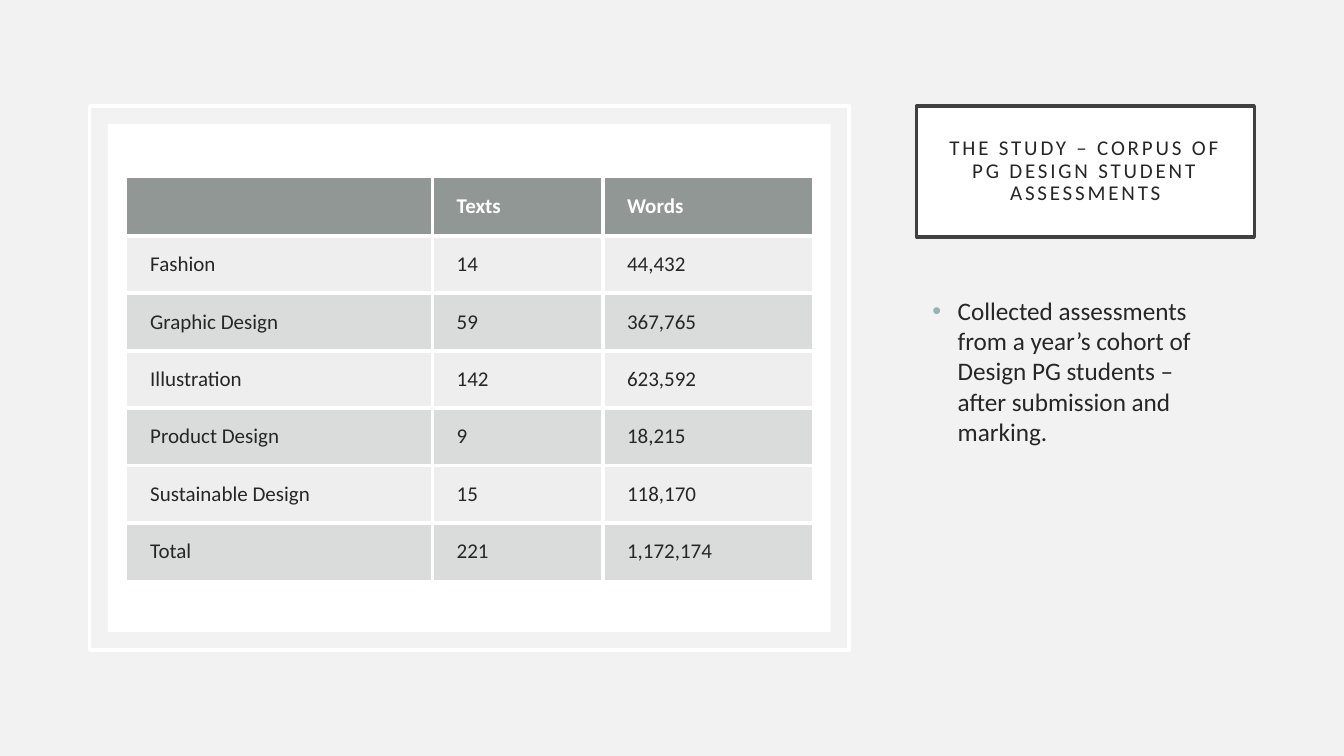
import pptx
import pptx.dml.color
import pptx.enum.shapes
import pptx.enum.text
import pptx.oxml
import pptx.oxml.ns
import pptx.util
import lxml.etree

Inches = pptx.util.Inches
Pt = pptx.util.Pt
RGBColor = pptx.dml.color.RGBColor
qn = pptx.oxml.ns.qn

BACKGROUND = RGBColor(0xF2, 0xF2, 0xF2)
WHITE = RGBColor(0xFF, 0xFF, 0xFF)
INK = RGBColor(0x26, 0x26, 0x26)
TITLE_BORDER = RGBColor(0x40, 0x40, 0x40)
BULLET = RGBColor(0x9B, 0xAF, 0xB5)
HEADER_FILL = RGBColor(0x63, 0x6B, 0x68)
BODY_FILL = RGBColor(0x87, 0x8E, 0x8B)

CORPUS = [
    ("", "Texts", "Words"),
    ("Fashion", "14", "44,432"),
    ("Graphic Design", "59", "367,765"),
    ("Illustration", "142", "623,592"),
    ("Product Design", "9", "18,215"),
    ("Sustainable Design", "15", "118,170"),
    ("Total", "221", "1,172,174"),
]
COLUMN_WIDTHS = (3.04, 1.69, 2.08)


def write(frame, text, size=15, color=INK, bold=False, align=None, tracking=None):
    paragraph = frame.paragraphs[0]
    paragraph.alignment = align
    run = paragraph.add_run()
    run.text = text
    run.font.name = "Calibri"
    run.font.size = Pt(size)
    run.font.bold = bold
    run.font.color.rgb = color
    if tracking:
        run.font._element.set("spc", str(tracking * 100))
    return paragraph


def set_margins(holder, left, others):
    holder.margin_left = Inches(left)
    holder.margin_top = holder.margin_right = holder.margin_bottom = Inches(others)


def set_line(shape, color, width=2.5):
    shape.line.color.rgb = color
    shape.line.width = Pt(width)


def add_title(slide, left, top, width, height):
    title = slide.shapes.title
    title.left, title.top = Inches(left), Inches(top)
    title.width, title.height = Inches(width), Inches(height)
    title.fill.solid()
    title.fill.fore_color.rgb = WHITE
    set_line(title, TITLE_BORDER)
    frame = title.text_frame
    frame.word_wrap = True
    frame.auto_size = pptx.enum.text.MSO_AUTO_SIZE.NONE
    frame.vertical_anchor = pptx.enum.text.MSO_ANCHOR.MIDDLE
    set_margins(frame, 0.2, 0.2)
    paragraph = write(
        frame,
        "THE STUDY – CORPUS OF PG DESIGN STUDENT ASSESSMENTS",
        align=pptx.enum.text.PP_ALIGN.CENTER,
        tracking=2,
    )
    paragraph.line_spacing = 0.9


def add_panel(slide, left, top, width, height):
    inset = 0.18
    rectangle = pptx.enum.shapes.MSO_SHAPE.RECTANGLE
    frame = slide.shapes.add_shape(
        rectangle, Inches(left), Inches(top), Inches(width), Inches(height)
    )
    frame.shadow.inherit = False
    frame.fill.background()
    set_line(frame, WHITE)
    mat = slide.shapes.add_shape(
        rectangle,
        Inches(left + inset),
        Inches(top + inset),
        Inches(width - 2 * inset),
        Inches(height - 2 * inset),
    )
    mat.shadow.inherit = False
    mat.fill.solid()
    mat.fill.fore_color.rgb = WHITE
    mat.line.fill.background()


def add_note(slide, left, top, width, height):
    note = slide.shapes.add_textbox(
        Inches(left), Inches(top), Inches(width), Inches(height)
    )
    note.text_frame.word_wrap = True
    paragraph = write(
        note.text_frame,
        "Collected assessments from a year’s cohort of Design PG students – "
        "after submission and marking.",
        size=18,
    )
    paragraph.space_before = Pt(10)
    properties = paragraph._p.get_or_add_pPr()
    properties.set("marL", str(Inches(0.31)))
    properties.set("indent", str(Inches(-0.25)))
    bullet_color = lxml.etree.SubElement(properties, qn("a:buClr"))
    lxml.etree.SubElement(bullet_color, qn("a:srgbClr"), val=str(BULLET))
    lxml.etree.SubElement(properties, qn("a:buFont"), typeface="Arial")
    lxml.etree.SubElement(properties, qn("a:buChar"), char="•")


def fill_cell(cell, color, opacity):
    cell.fill.solid()
    cell.fill.fore_color.rgb = color
    tint = cell._tc.tcPr.find(".//" + qn("a:srgbClr"))
    lxml.etree.SubElement(tint, qn("a:alpha"), val=str(opacity * 1000))


def border_cell(cell, sides):
    for position, side in enumerate(sides):
        border = lxml.etree.Element(qn("a:ln" + side), w=str(Pt(3)))
        solid = lxml.etree.SubElement(border, qn("a:solidFill"))
        lxml.etree.SubElement(solid, qn("a:srgbClr"), val=str(WHITE))
        cell._tc.tcPr.insert(position, border)


def add_corpus_table(slide, left, top, width, height):
    last_row, last_column = len(CORPUS) - 1, len(COLUMN_WIDTHS) - 1
    table = slide.shapes.add_table(
        len(CORPUS), len(COLUMN_WIDTHS),
        Inches(left), Inches(top), Inches(width), Inches(height),
    ).table
    for column, column_width in zip(table.columns, COLUMN_WIDTHS):
        column.width = Inches(column_width)
    for r, values in enumerate(CORPUS):
        header = r == 0
        for c, value in enumerate(values):
            cell = table.cell(r, c)
            cell.vertical_anchor = pptx.enum.text.MSO_ANCHOR.MIDDLE
            set_margins(cell, 0.24, 0.14)
            if value:
                write(cell.text_frame, value, color=WHITE if header else INK, bold=header)
            if header:
                fill_cell(cell, HEADER_FILL, 70)
            else:
                fill_cell(cell, BODY_FILL, 15 if r % 2 else 30)
            inner = {"L": c > 0, "R": c < last_column, "T": r > 0, "B": r < last_row}
            border_cell(cell, [side for side, shown in inner.items() if shown])


def main():
    deck = pptx.Presentation()
    deck.slide_width, deck.slide_height = Inches(13.33), Inches(7.5)
    slide = deck.slides.add_slide(deck.slide_layouts[5])
    slide.background.fill.solid()
    slide.background.fill.fore_color.rgb = BACKGROUND
    add_title(slide, 9.09, 1.05, 3.35, 1.3)
    add_panel(slide, 0.89, 1.05, 7.53, 5.4)
    add_note(slide, 9.09, 2.88, 3.17, 2.49)
    add_corpus_table(slide, 1.25, 1.76, sum(COLUMN_WIDTHS), 3.99)
    deck.save("out.pptx")


if __name__ == "__main__":
    main()
